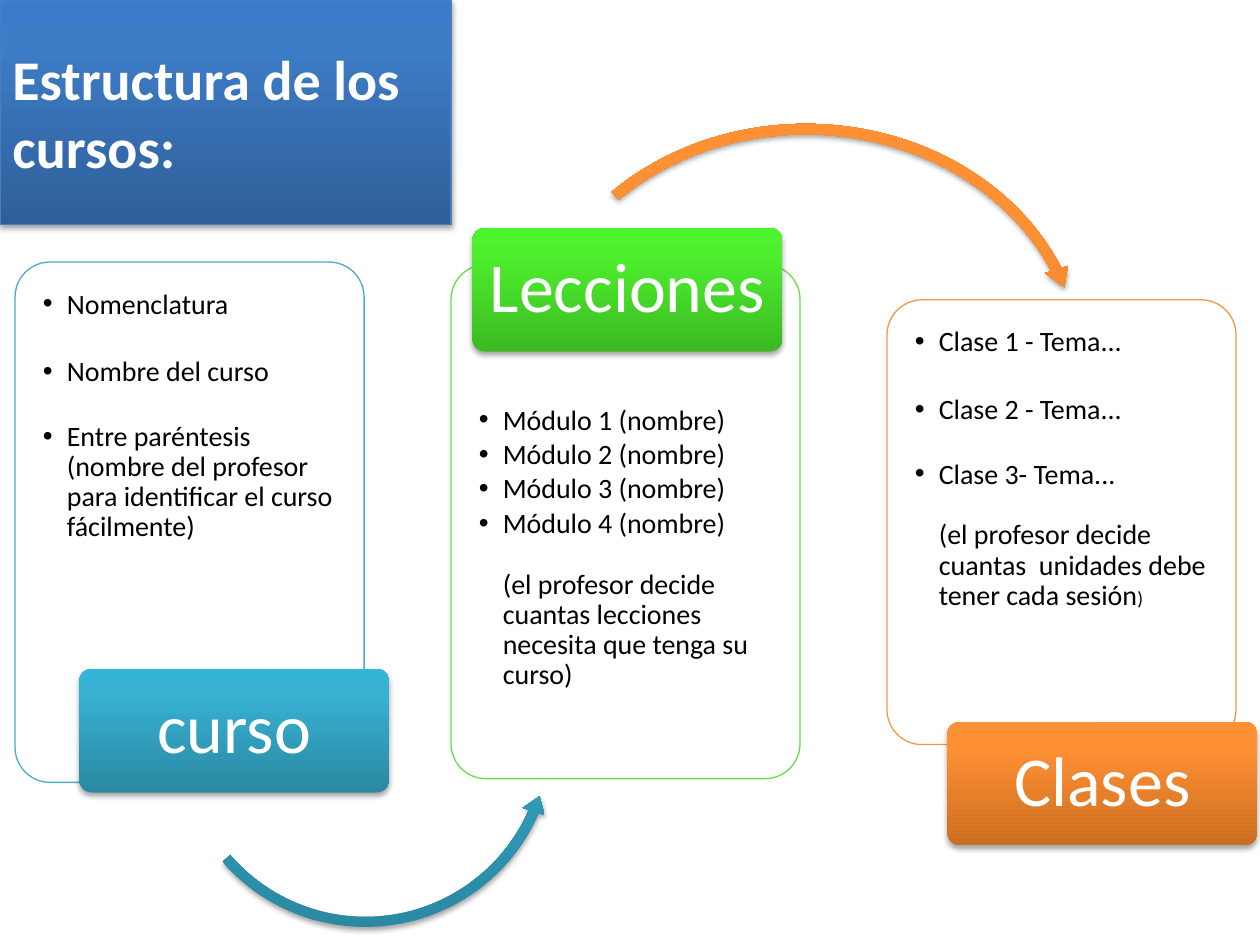
import copy
import pptx
import pptx.util
import pptx.dml.color
import pptx.enum.shapes
import pptx.enum.text
import pptx.oxml.ns
import lxml.etree

Inches = pptx.util.Inches
Pt = pptx.util.Pt
RGBColor = pptx.dml.color.RGBColor
KIND = pptx.enum.shapes.MSO_SHAPE
ALIGN = pptx.enum.text.PP_ALIGN
ANCHOR = pptx.enum.text.MSO_ANCHOR
qn = pptx.oxml.ns.qn
sub = lxml.etree.SubElement

WHITE = RGBColor(0xFF, 0xFF, 0xFF)
BLACK = RGBColor(0, 0, 0)
EDGE = RGBColor(0x4B, 0x7E, 0xBC)
AQUA = RGBColor(0x4B, 0xAC, 0xC6)
LIME = RGBColor(0x60, 0xE1, 0x46)
AMBER = RGBColor(0xF7, 0x96, 0x46)
BLUES = [RGBColor(0x2F, 0x5F, 0x99), RGBColor(0x3D, 0x7C, 0xC7), RGBColor(0x3A, 0x7C, 0xCB)]
TEALS = [RGBColor(0x2A, 0x88, 0xA2), RGBColor(0x37, 0xB1, 0xD2), RGBColor(0x34, 0xB4, 0xD6)]
GREENS = [RGBColor(0x3C, 0xB9, 0x23), RGBColor(0x4E, 0xF0, 0x2E), RGBColor(0x4C, 0xF5, 0x2A)]
FLAMES = [RGBColor(0xCC, 0x6E, 0x20), RGBColor(0xFF, 0x90, 0x34), RGBColor(0xFF, 0x91, 0x36)]

deck = pptx.Presentation()
deck.slide_width, deck.slide_height = Inches(10), Inches(7.5)
slide = deck.slides.add_slide(deck.slide_layouts[6])


def add_solid(kind, place, tones, adjust=()):
    """Add a shape with a three-stop vertical gradient and a soft shadow below."""
    shape = slide.shapes.add_shape(kind, *map(Inches, place))
    for i, value in enumerate(adjust):
        shape.adjustments[i] = value
    shape.fill.gradient()
    shape.fill.gradient_angle = 90
    stops = shape._element.spPr.find(".//" + qn("a:gsLst"))
    stops.append(copy.deepcopy(stops[-1]))
    for stop, spot, tone in zip(shape.fill.gradient_stops, (0, 0.8, 1), tones):
        stop.position = spot
        stop.color.rgb = tone
    shape.line.fill.background()
    shape.shadow.inherit = False
    effects = shape._element.spPr.find(qn("a:effectLst"))
    shadow = sub(effects, qn("a:outerShdw"), blurRad="40000", dist="23000",
                 dir="5400000", rotWithShape="0")
    color = sub(shadow, qn("a:srgbClr"), val=str(BLACK))
    sub(color, qn("a:alpha"), val="35000")
    return shape


def style_text(item, size, tone, bold=False):
    look = {"name": "Calibri", "size": Pt(size), "bold": bold}
    for name, value in look.items():
        setattr(item.font, name, value)
    item.font.color.rgb = tone


# Title
title = add_solid(KIND.RECTANGLE, (0, 0, 3.58, 1.78), BLUES)
title.line.color.rgb = EDGE
title.line.width = Pt(0.75)
title.text_frame.word_wrap = True
title.text_frame.vertical_anchor = ANCHOR.MIDDLE
para = title.text_frame.paragraphs[0]
para.text = "Estructura de los\vcursos:"
para.alignment = ALIGN.LEFT
for run in para.runs:
    style_text(run, 32, WHITE, True)

# Panels: each line is (text, space after in points, has bullet)
course = [
    ("Nomenclatura", 21.5, True),
    ("Nombre del curso", 19.5, True),
    ("Entre paréntesis (nombre del profesor para identificar el curso fácilmente)", 0, True),
]
lessons = [(f"Módulo {n} (nombre)", 2.4 if n < 4 else 17.5, True) for n in range(1, 5)]
lessons.append(("(el profesor decide  cuantas lecciones necesita que tenga su curso)", 0, False))
classes = [
    ("Clase 1 - Tema...", 21.5, True),
    ("Clase 2 - Tema...", 19.5, True),
    ("Clase 3- Tema...", 17.5, True),
    ("(el profesor decide  cuantas  unidades debe tener cada sesión", 0, False),
]
LEFT_ARC = (KIND.LEFT_CIRCULAR_ARROW, (1.35, 4.31, 3.1, 3.1), TEALS,
            (0.026, 3.115, 14.127, 83.502, 0.03))
RIGHT_ARC = (KIND.CIRCULAR_ARROW, (4.12, 0.93, 4.55, 3.97), FLAMES,
             (0.021, 2.463, 203.22, 133.194, 0.024))

# top, height, text inset, outline, lines, arrow, label, label place, label tones
panels = [
    (2.08, 4.13, 0.14, AQUA, course, LEFT_ARC, "curso", (0.63, 5.31), TEALS),
    (2.1, 4.08, 1.04, LIME, lessons, RIGHT_ARC, "Lecciones", (3.75, 1.81), GREENS),
    (2.38, 3.53, 0.14, AMBER, classes, None, "Clases", (7.52, 5.73), FLAMES),
]
for col, (top, high, inset, edge, lines, arc, name, spot, tones) in enumerate(panels):
    panel = slide.shapes.add_shape(KIND.ROUNDED_RECTANGLE, Inches(0.12 + 3.46 * col),
                                   Inches(top), Inches(2.77), Inches(high))
    panel.adjustments[0] = 0.1
    panel.shadow.inherit = False
    panel.fill.solid()
    panel.fill.fore_color.rgb = WHITE
    color = panel._element.spPr.find(qn("a:solidFill"))[0]
    sub(color, qn("a:alpha"), val="90000")
    panel.line.color.rgb = edge
    panel.line.width = Pt(0.75)
    frame = panel.text_frame
    layout = {"word_wrap": True, "vertical_anchor": ANCHOR.TOP, "margin_top": Inches(inset),
              "margin_left": Inches(0.14), "margin_right": Inches(0.14)}
    for key, value in layout.items():
        setattr(frame, key, value)
    for i, (text, gap, dot) in enumerate(lines):
        para = frame.add_paragraph() if i else frame.paragraphs[0]
        para.alignment = ALIGN.LEFT
        para.line_spacing = 0.9
        para.space_after = Pt(gap)
        props = para._p.get_or_add_pPr()
        props.set("marL", str(Inches(0.19)))
        props.set("indent", str(Inches(-0.19) if dot else 0))
        if dot:
            sub(props, qn("a:buFont"), typeface="Arial")
            sub(props, qn("a:buChar"), char="•")
        run = para.add_run()
        run.text = text
        style_text(run, 16, BLACK)
    if lines is classes:
        run = para.add_run()
        run.text = ")"
        style_text(run, 11, BLACK)

    if arc:
        add_solid(*arc)

    label = add_solid(KIND.ROUNDED_RECTANGLE, (*spot, 2.46, 0.98), tones, (0.1,))
    frame = label.text_frame
    layout = {"word_wrap": True, "vertical_anchor": ANCHOR.MIDDLE,
              "margin_left": Inches(0.08), "margin_right": Inches(0.08),
              "margin_top": Inches(0.06), "margin_bottom": Inches(0.06)}
    for key, value in layout.items():
        setattr(frame, key, value)
    para = frame.paragraphs[0]
    para.alignment = ALIGN.CENTER
    para.line_spacing = 0.9
    run = para.add_run()
    run.text = name
    style_text(run, 40, WHITE)

deck.save("out.pptx")
